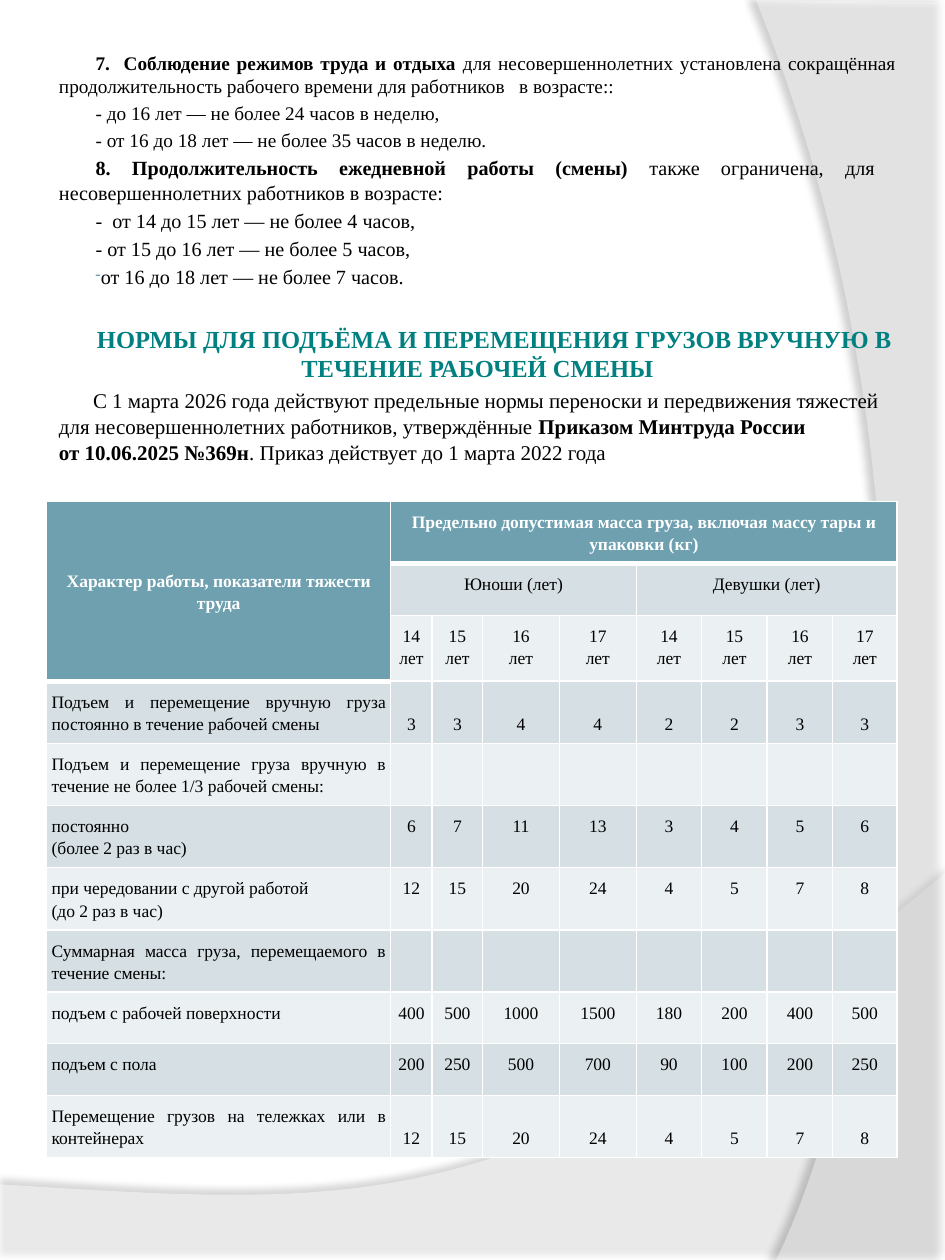
from lxml import etree
from pptx import Presentation
from pptx.dml.color import RGBColor
from pptx.enum.text import MSO_ANCHOR, PP_ALIGN
from pptx.oxml.ns import qn
from pptx.util import Inches, Pt

LEFT, CENTER, JUSTIFY = PP_ALIGN.LEFT, PP_ALIGN.CENTER, PP_ALIGN.JUSTIFY
TOP, MIDDLE, BOTTOM = MSO_ANCHOR.TOP, MSO_ANCHOR.MIDDLE, MSO_ANCHOR.BOTTOM
FONT = "Times New Roman"
HARD_SPACE = chr(160)
COLORS = {
    "text": "000000",
    "white": "FFFFFF",
    "heading": "008080",
    "header": "6EA0B0",
    "dark band": "D5DFE4",
    "light band": "EBF0F2",
}


def write_paragraph(frame, text, first=False, size=10, color="text", bold=False,
                    align=LEFT, indent=0, before=0, spacing=1.0, bullet=None):
    """Write one paragraph; parts between ** marks switch bold on and off."""
    para = frame.paragraphs[0] if first else frame.add_paragraph()
    para.alignment = align
    para.line_spacing = spacing
    para.space_before = Pt(0 if first else before)
    properties = para._p.get_or_add_pPr()
    properties.set("marL", "0")
    properties.set("indent", str(Inches(indent)))
    if bullet:
        bullet_color = etree.SubElement(properties, qn("a:buClr"))
        etree.SubElement(bullet_color, qn("a:srgbClr"), val=COLORS["header"])
        etree.SubElement(properties, qn("a:buSzPct"), val="80000")
        etree.SubElement(properties, qn("a:buChar"), char=bullet)
    for number, part in enumerate(text.split("**")):
        if part:
            span = para.add_run()
            span.text = part
            span.font.name = FONT
            span.font.size = Pt(size)
            span.font.bold = bold or number % 2 == 1
            span.font.color.rgb = RGBColor.from_string(COLORS[color])


def curve_points(start, control_1, control_2, end, steps=40):
    """Return points along a cubic Bezier curve."""
    points = []
    for step in range(steps + 1):
        t = step / steps
        weights = ((1 - t) ** 3, 3 * t * (1 - t) ** 2, 3 * t ** 2 * (1 - t), t ** 3)
        points.append(tuple(
            sum(weight * value for weight, value in zip(weights, values))
            for values in zip(start, control_1, control_2, end)
        ))
    return points


deck = Presentation()
deck.slide_width = Inches(7.5)
deck.slide_height = Inches(10)
page = deck.slides.add_slide(deck.slide_layouts[6])

# Translucent waves: corners, edge curve, opacity, then shadow opacity, distance, angle
waves = [
    ([(0, 10.01), (7.5, 10.01)],
     [(7.5, 6.93), (4.19, 9.72), (2.93, 9.58), (0, 9.4)], 45, 35, 3.5, 270),
    ([(7.5, 0.02), (7.5, 10)],
     [(6.16, 10), (7.01, 8.26), (7.63, 4.01), (6, 0)], 40, 45, 4, 180),
]
for corners, edge, opacity, shadow_opacity, distance, angle in waves:
    outline = [(Inches(x), Inches(y)) for x, y in corners + curve_points(*edge)]
    builder = page.shapes.build_freeform(*outline[0])
    builder.add_line_segments(outline[1:], close=True)
    wave = builder.convert_to_shape()
    wave.fill.solid()
    wave.fill.fore_color.rgb = RGBColor.from_string(COLORS["white"])
    wave.line.fill.background()
    wave.shadow.inherit = False
    wave_properties = wave._element.spPr
    fill_color = wave_properties.find(qn("a:solidFill")).find(qn("a:srgbClr"))
    etree.SubElement(fill_color, qn("a:alpha"), val=str(opacity * 1000))
    shadow = etree.SubElement(
        wave_properties.find(qn("a:effectLst")), qn("a:outerShdw"),
        blurRad=str(Pt(4)), dist=str(Pt(distance)), dir=str(angle * 60000),
        algn="ctr", rotWithShape="0")
    shadow_color = etree.SubElement(shadow, qn("a:srgbClr"), val=COLORS["text"])
    etree.SubElement(shadow_color, qn("a:alpha"), val=str(shadow_opacity * 1000))

# Rules on working hours and the introduction to the table
hours = {"size": 11, "align": JUSTIFY, "indent": 0.29, "before": 2.2}
shifts = {**hours, "size": 11.5, "before": 2.3}
rules = [
    ("**7.  Соблюдение режимов труда и отдыха** для несовершеннолетних установлена "
     "сокращённая продолжительность рабочего времени для работников   в возрасте:: ", hours),
    ("- до 16 лет — не более 24 часов в неделю, ", hours),
    ("- от 16 до 18 лет — не более 35 часов в неделю. ", hours),
    ("**8. Продолжительность ежедневной работы (смены) **также ограничена, для  "
     "несовершеннолетних работников в возрасте: ", shifts),
    ("-  от 14 до 15 лет — не более 4 часов, ", shifts),
    ("- от 15 до 16 лет — не более 5 часов, ", shifts),
    ("от 16 до 18 лет — не более 7 часов. ", {**shifts, "bullet": "-"}),
    ("НОРМЫ ДЛЯ ПОДЪЁМА И ПЕРЕМЕЩЕНИЯ ГРУЗОВ ВРУЧНУЮ В ТЕЧЕНИЕ РАБОЧЕЙ СМЕНЫ",
     {"size": 14, "color": "heading", "bold": True, "align": CENTER,
      "indent": 0.27, "before": 20}),
    ("С 1 марта 2026 года действуют предельные нормы переноски и передвижения тяжестей "
     "для несовершеннолетних работников, утверждённые **Приказом Минтруда России "
     f"от{HARD_SPACE}10.06.2025{HARD_SPACE}№369н**. Приказ действует до 1 марта 2022 года",
     {"size": 12, "indent": 0.27, "before": 2.4, "spacing": 1.03}),
]
rules_box = page.shapes.add_textbox(Inches(0.37), Inches(0.36), Inches(6.84), Inches(3.31))
rules_box.text_frame.word_wrap = True
for index, (text, style) in enumerate(rules):
    write_paragraph(rules_box.text_frame, text, first=index == 0, **style)

# Load limits by age
ages = [f"{age}\nлет" for age in (14, 15, 16, 17)]
blank = [""] * 8
rows = [
    ["Характер работы, показатели тяжести труда",
     "Предельно допустимая масса груза, включая массу тары и упаковки (кг)"] + blank[1:],
    ["", "Юноши (лет)", "", "", "", "Девушки (лет)", "", "", ""],
    [""] + ages * 2,
    ["Подъем и перемещение вручную груза постоянно в течение рабочей смены",
     3, 3, 4, 4, 2, 2, 3, 3],
    ["Подъем и перемещение груза вручную в течение не более 1/3 рабочей смены:"] + blank,
    ["постоянно\n(более 2 раз в час)", 6, 7, 11, 13, 3, 4, 5, 6],
    ["при чередовании с другой работой\n(до 2 раз в час)", 12, 15, 20, 24, 4, 5, 7, 8],
    ["Суммарная масса груза, перемещаемого в течение смены:"] + blank,
    ["подъем с рабочей поверхности", 400, 500, 1000, 1500, 180, 200, 400, 500],
    ["подъем с пола", 200, 250, 500, 700, 90, 100, 200, 250],
    ["Перемещение грузов на тележках или в контейнерах", 12, 15, 20, 24, 4, 5, 7, 8],
]
column_widths = [2.73, 0.33, 0.4, 0.61, 0.61, 0.52, 0.52, 0.52, 0.51]
row_height = 0.41
bottom_rows = (3, 10)

table = page.shapes.add_table(
    len(rows), len(column_widths), Inches(0.37), Inches(3.98),
    Inches(sum(column_widths)), Inches(row_height * len(rows))).table
table.horz_banding = False
for column, width in zip(table.columns, column_widths):
    column.width = Inches(width)
for first_cell, last_cell in [((0, 0), (2, 0)), ((0, 1), (0, 8)),
                              ((1, 1), (1, 4)), ((1, 5), (1, 8))]:
    table.cell(*first_cell).merge(table.cell(*last_cell))

for row_index, values in enumerate(rows):
    table.rows[row_index].height = Inches(row_height)
    for column_index, value in enumerate(values):
        cell = table.cell(row_index, column_index)
        is_label = column_index == 0
        is_header = row_index == 0 or (is_label and row_index < 3)
        band = "dark band" if row_index % 2 else "light band"
        cell.fill.solid()
        cell.fill.fore_color.rgb = RGBColor.from_string(COLORS["header" if is_header else band])
        cell.margin_left = cell.margin_right = Inches(0.04)
        cell.margin_top = Inches(0.07)
        if is_header and is_label:
            cell.vertical_anchor = MIDDLE
        elif row_index in bottom_rows and not is_label:
            cell.vertical_anchor = BOTTOM
        else:
            cell.vertical_anchor = TOP
        cell.margin_bottom = Inches(0.04 if cell.vertical_anchor == TOP else 0.07)
        if is_header:
            border = etree.Element(qn("a:lnB"), w=str(Pt(3)))
            border_fill = etree.SubElement(border, qn("a:solidFill"))
            etree.SubElement(border_fill, qn("a:srgbClr"), val=COLORS["white"])
            cell._tc.get_or_add_tcPr().insert(0, border)
        if value == "":
            continue
        for line_index, line in enumerate(str(value).split("\n")):
            write_paragraph(
                cell.text_frame, line, first=line_index == 0, spacing=1.15,
                color="white" if is_header else "text", bold=is_header,
                align=JUSTIFY if is_label and not is_header else CENTER)

deck.save("out.pptx")
